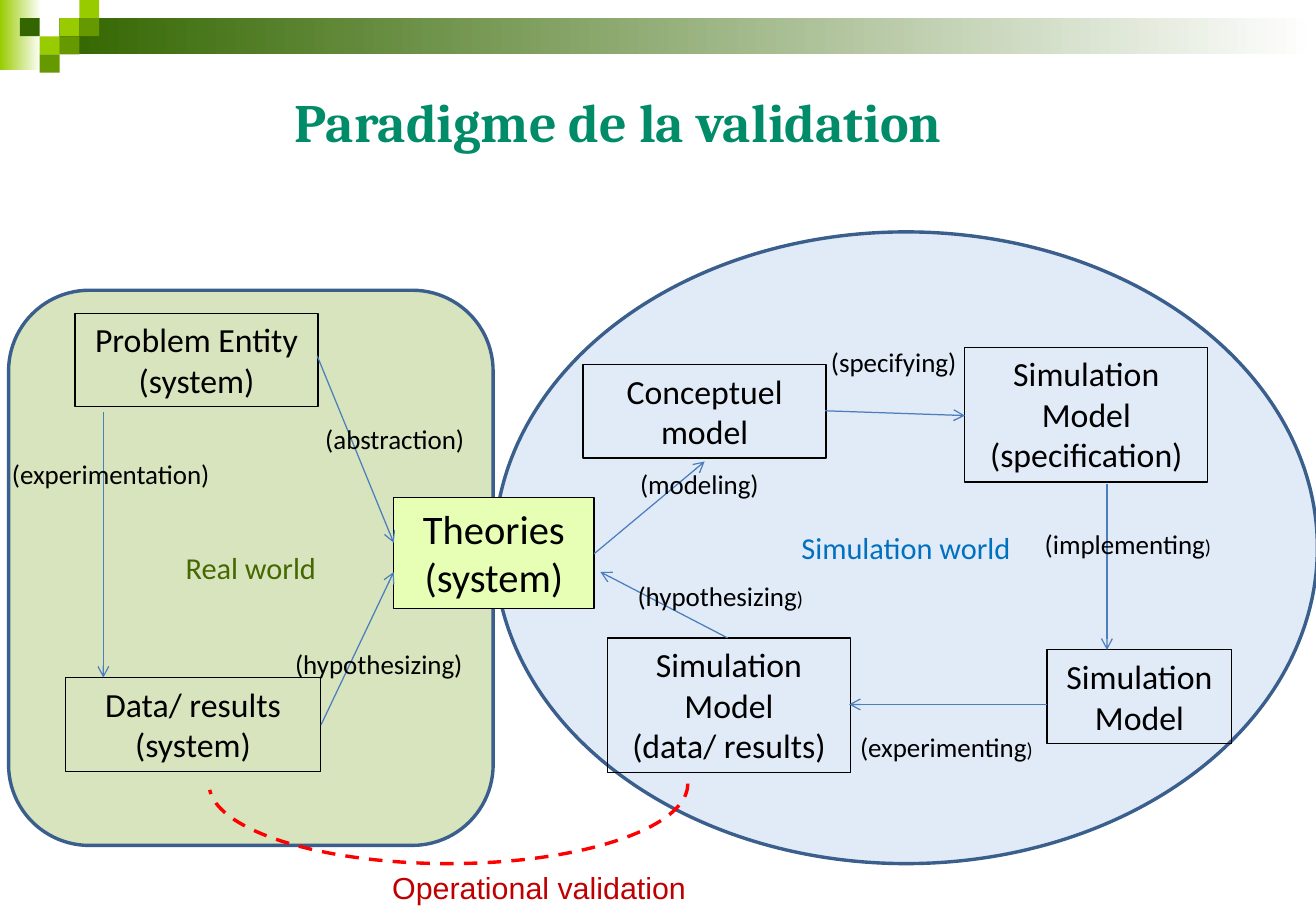
from dataclasses import dataclass
from typing import Optional

import lxml.etree
import pptx
import pptx.dml.color
import pptx.dml.line
import pptx.enum.dml
import pptx.enum.shapes
import pptx.enum.text
import pptx.oxml.ns
import pptx.shapes.autoshape
import pptx.slide
import pptx.text.text
import pptx.util

Cm = pptx.util.Cm
Pt = pptx.util.Pt
RGBColor = pptx.dml.color.RGBColor
Kind = pptx.enum.shapes.MSO_SHAPE
Align = pptx.enum.text.PP_ALIGN
Anchor = pptx.enum.text.MSO_ANCHOR

BLACK = RGBColor(0x00, 0x00, 0x00)
WHITE = RGBColor(0xFF, 0xFF, 0xFF)
LIME = RGBColor(0x99, 0xCC, 0x00)
GREEN = RGBColor(0x66, 0x99, 0x00)
DARK_GREEN = RGBColor(0x33, 0x66, 0x00)
TITLE_GREEN = RGBColor(0x00, 0x8C, 0x69)
REAL_FILL = RGBColor(0xD7, 0xE4, 0xBD)
REAL_TEXT = RGBColor(0x45, 0x68, 0x00)
SIMULATION_FILL = RGBColor(0xE1, 0xEA, 0xF7)
SIMULATION_TEXT = RGBColor(0x00, 0x70, 0xC0)
WORLD_LINE = RGBColor(0x3A, 0x5F, 0x8C)
THEORY_FILL = RGBColor(0xE6, 0xFF, 0xB5)
ARROW_BLUE = RGBColor(0x4B, 0x7E, 0xBC)
RED = RGBColor(0xFF, 0x00, 0x00)
DARK_RED = RGBColor(0xC0, 0x00, 0x00)


@dataclass(frozen=True)
class Area:
    """Left, top, width and height in centimetres."""
    left: float
    top: float
    width: float
    height: float

    def lengths(self) -> list[pptx.util.Length]:
        return [Cm(value) for value in (self.left, self.top, self.width, self.height)]


@dataclass(frozen=True)
class World:
    text: str
    kind: Kind
    area: Area
    fill: RGBColor
    color: RGBColor


@dataclass(frozen=True)
class Entity:
    text: str
    area: Area
    size: int = 20
    fill: Optional[RGBColor] = None


@dataclass(frozen=True)
class Step:
    """An arrow with the name of the activity beside it."""
    start: tuple[float, float]
    end: tuple[float, float]
    text: str
    label: Area
    bracket_size: int = 16


LABEL_HEIGHT = 0.94
TILE_WIDTH, TILE_HEIGHT = 0.415, 0.38
TILES = [  # column, row, colour
    (3, 1, LIME), (4, 0, LIME), (4, 1, GREEN), (2, 2, LIME),
    (1, 1, DARK_GREEN), (3, 2, GREEN), (2, 3, GREEN),
]
BANDS = [(Area(0, 0, 0.86, 1.47), LIME), (Area(1.24, 0.38, 26.27, 0.76), DARK_GREEN)]

WORLDS = [
    World("Simulation world", Kind.OVAL, Area(10.34, 4.85, 17.2, 13.21),
          SIMULATION_FILL, SIMULATION_TEXT),
    World("Real world", Kind.ROUNDED_RECTANGLE, Area(0.18, 6.07, 10.13, 11.61),
          REAL_FILL, REAL_TEXT),
]
ENTITIES = [
    Entity("Problem Entity\n(system)", Area(1.57, 6.55, 5.08, 1.96)),
    Entity("Data/ results\n(system)", Area(1.37, 14.17, 5.33, 1.96)),
    Entity("Theories\n(system)", Area(8.23, 10.41, 4.19, 2.31), 24, THEORY_FILL),
    Entity("Conceptuel\nmodel", Area(12.19, 7.62, 5.08, 1.96)),
    Entity("Simulation\nModel\n(specification)", Area(20.17, 7.26, 5.08, 2.82)),
    Entity("Simulation\nModel\n(data/ results)", Area(12.7, 13.34, 5.08, 2.82)),
    Entity("Simulation\nModel", Area(21.89, 13.59, 3.86, 1.96)),
]
STEPS = [
    Step((6.63, 7.44), (8.23, 11.35), "(abstraction)", Area(6.55, 8.71, 3.68, LABEL_HEIGHT)),
    Step((6.71, 15.16), (8.23, 11.96), "(hypothesizing)", Area(5.92, 13.41, 4.06, LABEL_HEIGHT)),
    Step((2.16, 8.61), (2.16, 14.17), "(experimentation)", Area(0, 9.45, 5.08, LABEL_HEIGHT)),
    Step((12.42, 11.58), (14.73, 9.65), "(modeling)", Area(13.13, 9.65, 3.2, LABEL_HEIGHT)),
    Step((15.21, 13.34), (12.55, 11.96), "(hypothesizing)",
         Area(13.08, 11.99, 4.27, LABEL_HEIGHT), 12),
    Step((17.25, 8.59), (20.17, 8.69), "(specifying)", Area(17.12, 7.11, 3.2, LABEL_HEIGHT)),
    Step((23.14, 10.13), (23.14, 13.59), "(implementing)",
         Area(21.59, 10.9, 4.37, LABEL_HEIGHT), 12),
    Step((21.89, 14.73), (17.75, 14.73), "(experimenting)",
         Area(17.73, 15.16, 4.22, LABEL_HEIGHT), 12),
]


def write(frame: pptx.text.text.TextFrame, text: str, *, size: int = 16,
          font: str = "Calibri", color: RGBColor = BLACK, bold: bool = False,
          align: Align = Align.LEFT, anchor: Anchor = Anchor.TOP,
          bracket_size: Optional[int] = None) -> None:
    """Fill a frame, one paragraph a line; bracket_size sets the last character."""
    frame.word_wrap = True
    frame.vertical_anchor = anchor
    for index, line in enumerate(text.split("\n")):
        para = frame.add_paragraph() if index else frame.paragraphs[0]
        para.alignment = align
        pieces = [(line, size)]
        if bracket_size not in (None, size):
            pieces = [(line[:-1], size), (line[-1], bracket_size)]
        for piece, piece_size in pieces:
            span = para.add_run()
            span.text = piece
            span.font.name = font
            span.font.size = Pt(piece_size)
            span.font.bold = bold
            span.font.color.rgb = color


def add_text(page: pptx.slide.Slide, area: Area, text: str, **text_format) -> None:
    write(page.shapes.add_textbox(*area.lengths()).text_frame, text, **text_format)


def draw_line(line: pptx.dml.line.LineFormat, color: RGBColor, width: float) -> None:
    line.color.rgb = color
    line.width = Pt(width)


def add_box(page: pptx.slide.Slide, kind: Kind, area: Area,
            fill: Optional[RGBColor] = None, line: Optional[RGBColor] = None,
            width: float = 0.75) -> pptx.shapes.autoshape.Shape:
    box = page.shapes.add_shape(kind, *area.lengths())
    box.shadow.inherit = False
    if fill is None:
        box.fill.background()
    else:
        box.fill.solid()
        box.fill.fore_color.rgb = fill
    if line is None:
        box.line.fill.background()
    else:
        draw_line(box.line, line, width)
    return box


def add_band(page: pptx.slide.Slide, area: Area, color: RGBColor) -> None:
    band = add_box(page, Kind.RECTANGLE, area)
    band.fill.gradient()
    band.fill.gradient_angle = 0
    for stop, shade, position in zip(band.fill.gradient_stops, (color, WHITE), (0, 1)):
        stop.color.rgb = shade
        stop.position = position


def add_step(page: pptx.slide.Slide, step: Step) -> None:
    ends = [Cm(value) for value in step.start + step.end]
    arrow = page.shapes.add_connector(pptx.enum.shapes.MSO_CONNECTOR.STRAIGHT, *ends)
    draw_line(arrow.line, ARROW_BLUE, 0.75)
    name = pptx.oxml.ns.qn
    lxml.etree.SubElement(arrow.line._get_or_add_ln(), name("a:tailEnd"), type="arrow")
    lxml.etree.SubElement(arrow._element.spPr, name("a:effectLst"))
    add_text(page, step.label, step.text, bracket_size=step.bracket_size)


def main() -> None:
    deck = pptx.Presentation()
    deck.slide_width, deck.slide_height = Cm(27.51), Cm(19.05)
    page = deck.slides.add_slide(deck.slide_layouts[6])

    # Header decoration and title
    for area, color in BANDS:
        add_band(page, area, color)
    for column, row, color in TILES:
        tile = Area(column * TILE_WIDTH, row * TILE_HEIGHT, TILE_WIDTH, TILE_HEIGHT)
        add_box(page, Kind.RECTANGLE, tile, color)
    add_text(page, Area(2.95, 1.3, 19.96, 2.44), "Paradigme de la validation", size=32,
             font="Cambria", color=TITLE_GREEN, bold=True, align=Align.CENTER,
             anchor=Anchor.MIDDLE)

    # Worlds, their entities and the steps between them
    for world in WORLDS:
        box = add_box(page, world.kind, world.area, world.fill, WORLD_LINE, 2)
        write(box.text_frame, world.text, size=18, color=world.color,
              align=Align.CENTER, anchor=Anchor.MIDDLE)
    for entity in ENTITIES:
        box = add_box(page, Kind.RECTANGLE, entity.area, entity.fill, BLACK)
        write(box.text_frame, entity.text, size=entity.size, align=Align.CENTER)
    for step in STEPS:
        add_step(page, step)

    # Operational validation
    arc = add_box(page, Kind.ARC, Area(4.37, 14.73, 10.01, 3.33), line=RED, width=2)
    arc.line.dash_style = pptx.enum.dml.MSO_LINE.DASH
    arc.adjustments[0], arc.adjustments[1] = 215.96, 107.15
    add_text(page, Area(7.95, 18.06, 8, 1.02), "Operational validation", size=18,
             font="Arial", color=DARK_RED)

    deck.save("out.pptx")


if __name__ == "__main__":
    main()
